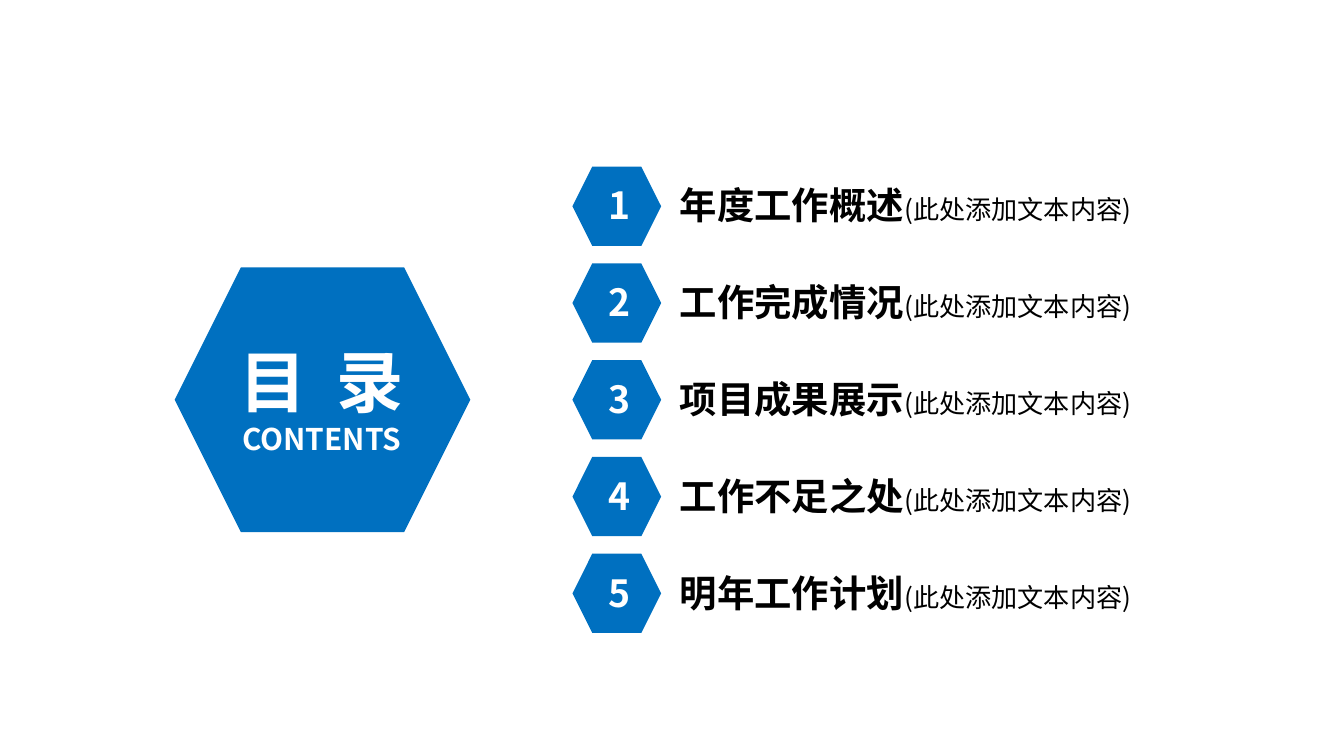
from pptx import Presentation
from pptx.dml.color import RGBColor
from pptx.enum.shapes import MSO_SHAPE
from pptx.enum.text import MSO_AUTO_SIZE, PP_ALIGN
from pptx.util import Inches

FONT = "Noto Sans CJK SC"
COLORS = {"blue": "0070C0", "white": "FFFFFF", "black": "000000"}
TOPICS = ["年度工作概述", "工作完成情况", "项目成果展示", "工作不足之处", "明年工作计划"]
HINT = "(此处添加文本内容)"


def paint(shape, color):
    shape.fill.solid()
    shape.fill.fore_color.rgb = RGBColor.from_string(COLORS[color])


def add_hex(slide, left, top, width, height):
    shape = slide.shapes.add_shape(
        MSO_SHAPE.HEXAGON, Inches(left), Inches(top), Inches(width), Inches(height))
    shape.shadow.inherit = False
    paint(shape, "blue")
    shape.line.fill.background()


def add_text(slide, left, top, width, height, lines, color, align):
    box = slide.shapes.add_textbox(
        Inches(left), Inches(top), Inches(width), Inches(height))
    frame = box.text_frame
    frame.word_wrap = True
    frame.auto_size = MSO_AUTO_SIZE.SHAPE_TO_FIT_TEXT
    for index, runs in enumerate(lines):
        para = frame.add_paragraph() if index else frame.paragraphs[0]
        para.alignment = align
        for text, size, bold, gap in runs:
            run = para.add_run()
            run.text = text
            run.font.size = Inches(size / 72)
            run.font.bold = bold
            run.font.name = FONT
            run.font.color.rgb = RGBColor.from_string(COLORS[color])
            props = run._r.get_or_add_rPr()
            east = props.makeelement(
                "{http://schemas.openxmlformats.org/drawingml/2006/main}ea",
                {"typeface": FONT})
            props.append(east)
            if gap:
                props.set("spc", str(gap * 100))
    return box


def add_title(slide, left, top, width, height):
    add_hex(slide, left, top, width, height)
    lines = [
        [("目", 36, True, 0), (" ", 36, True, 8), ("录", 36, True, 0)],
        [("CONTENTS", 16, True, 0)],
    ]
    add_text(slide, left + 0.23, top + 0.49, width - 0.47, 0.98,
             lines, "white", PP_ALIGN.CENTER)


def add_topic(slide, left, top, width, number, topic):
    add_hex(slide, left, top, 0.66, 0.59)
    badge = add_text(slide, left + 0.17, top + 0.07, 0.31, 0.44,
                     [[(str(number), 20, True, 0)]], "white", PP_ALIGN.CENTER)
    paint(badge, "blue")
    add_text(slide, left + 0.7, top + 0.07, width - 0.7, 0.44,
             [[(topic, 20, True, 0), (HINT, 14, False, 0)]], "black", PP_ALIGN.LEFT)


def add_list(slide, left, top, width, pitch):
    for index, topic in enumerate(TOPICS):
        add_topic(slide, left, top + index * pitch, width, index + 1, topic)


def main():
    deck = Presentation()
    deck.slide_width = Inches(10)
    deck.slide_height = deck.slide_width * 9 // 16
    slide = deck.slides.add_slide(deck.slide_layouts[6])
    add_title(slide, 1.3, 1.99, 2.2, 1.97)
    add_list(slide, 4.26, 1.24, 4.36, 0.72)
    deck.save("out.pptx")


if __name__ == "__main__":
    main()
